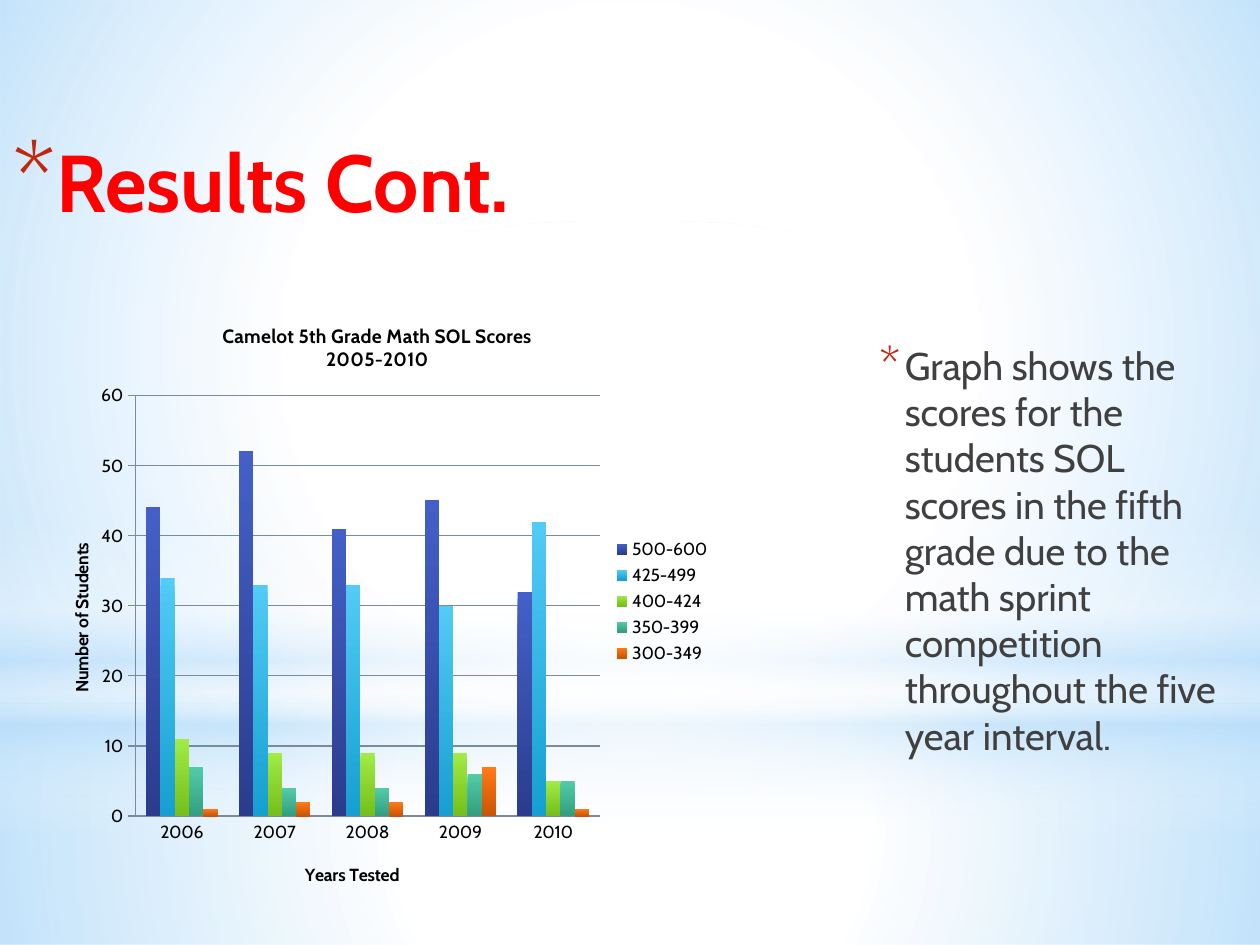
from dataclasses import dataclass
from typing import NamedTuple

from lxml import etree
from pptx import Presentation
from pptx import util as u
from pptx.chart import data as chart_data
from pptx.dml.color import RGBColor
from pptx.enum import chart as charts, shapes, text
from pptx.oxml import ns


@dataclass(frozen=True)
class Theme:
    font: str = "Cabin"
    white: str = "FFFFFF"
    sky: str = "B4DCFA"
    title: str = "FF0000"
    body: str = "404040"
    bullet: str = "C3260C"
    black: str = "000000"
    grid: str = "7A8B9C"
    title_size: float = 46
    body_size: float = 22
    chart_title_size: float = 11
    chart_size: float = 10


class Box(NamedTuple):
    left: float
    top: float
    width: float
    height: float

    def lengths(self) -> list:
        return [u.Pt(value) for value in self]


class Stop(NamedTuple):
    position: int
    color: str
    opacity: int


class Glow(NamedTuple):
    box: Box
    kind: shapes.MSO_SHAPE
    stops: list[Stop]
    radial: bool = True


class BulletText(NamedTuple):
    box: Box
    words: str
    size: float
    color: str
    bold: bool
    margin: float
    hanging: float
    bullet_percent: int
    space_after: float


class Series(NamedTuple):
    name: str
    values: tuple[int, ...]
    top_color: str
    bottom_color: str


THEME = Theme()
RECTANGLE, OVAL = shapes.MSO_SHAPE.RECTANGLE, shapes.MSO_SHAPE.OVAL
WHITE, SKY = THEME.white, THEME.sky

GLOWS = [
    Glow(Box(0, 402, 720, 138), RECTANGLE,
         [Stop(0, WHITE, 91), Stop(37, WHITE, 76), Stop(100, SKY, 79)]),
    Glow(Box(0, 0, 720, 402), RECTANGLE,
         [Stop(0, WHITE, 89), Stop(48, WHITE, 62), Stop(100, SKY, 79)]),
    Glow(Box(0, 296.6, 720, 180), RECTANGLE,
         [Stop(0, WHITE, 0), Stop(29, WHITE, 30), Stop(45, SKY, 40),
          Stop(55, WHITE, 26), Stop(65, SKY, 60), Stop(100, WHITE, 0)], radial=False),
    Glow(Box(0, 126, 720, 402), OVAL, [Stop(0, WHITE, 100), Stop(56, WHITE, 0)]),
]

TEXTS = [
    BulletText(Box(0, 72, 512.6, 90), "Results Cont.", THEME.title_size,
               THEME.title, True, 25.2, 25.2, 128, 0),
    BulletText(Box(492, 192, 216, 273.6),
               "Graph shows the scores for the students SOL scores in the fifth grade "
               "due to the math sprint competition throughout the five year interval.",
               THEME.body_size, THEME.body, False, 18, 14.4, 130, 3),
]

CHART_BOX = Box(18, 168, 396, 351)
YEARS = ["2006", "2007", "2008", "2009", "2010"]
SERIES = [
    Series("500-600", (44, 52, 41, 45, 32), "4460C8", "2B3C8E"),
    Series("425-499", (34, 33, 33, 30, 42), "52CBF5", "169FD1"),
    Series("400-424", (11, 9, 9, 9, 5), "A0EB45", "76BE1B"),
    Series("350-399", (7, 4, 4, 6, 5), "52CBA9", "339E80"),
    Series("300-349", (1, 2, 2, 7, 1), "FF7A18", "C95505"),
]


def child(parent, tag: str, **attributes):
    return etree.SubElement(parent, ns.qn(tag), {k: str(v) for k, v in attributes.items()})


def style_font(font, size: float, color: str, bold: bool = False) -> None:
    font.name, font.size, font.bold = THEME.font, u.Pt(size), bold
    font.color.rgb = RGBColor.from_string(color)


def draw_glow(slide, glow: Glow) -> None:
    shape = slide.shapes.add_shape(glow.kind, *glow.box.lengths())
    shape.line.fill.background()
    shape.shadow.inherit = False
    # Gradient with transparent stops
    gradient = etree.Element(ns.qn("a:gradFill"), rotWithShape="1")
    stops = child(gradient, "a:gsLst")
    for stop in glow.stops:
        color = child(child(stops, "a:gs", pos=stop.position * 1000), "a:srgbClr", val=stop.color)
        child(color, "a:alpha", val=stop.opacity * 1000)
    if glow.radial:
        center = dict.fromkeys("ltrb", 50000)
        child(child(gradient, "a:path", path="circle"), "a:fillToRect", **center)
    else:
        child(gradient, "a:lin", ang=90 * 60000, scaled=0)
    shape.element.spPr.find(ns.qn("a:ln")).addprevious(gradient)


def draw_text(slide, item: BulletText) -> None:
    frame = slide.shapes.add_textbox(*item.box.lengths()).text_frame
    frame.word_wrap = True
    frame.vertical_anchor = text.MSO_ANCHOR.TOP
    paragraph = frame.paragraphs[0]
    paragraph.space_after = u.Pt(item.space_after)
    run = paragraph.add_run()
    run.text = item.words
    style_font(run.font, item.size, item.color, item.bold)
    # Hanging asterisk
    properties = paragraph._p.get_or_add_pPr()
    properties.set("marL", str(u.Pt(item.margin)))
    properties.set("indent", str(-u.Pt(item.hanging)))
    child(child(properties, "a:buClr"), "a:srgbClr", val=THEME.bullet)
    child(properties, "a:buSzPct", val=item.bullet_percent * 1000)
    child(properties, "a:buFont", typeface=THEME.font)
    child(properties, "a:buChar", char="*")


def place(element, index: int, **fractions: float) -> None:
    """Set a manual chart layout as the child at the given index."""
    for old in element.findall(ns.qn("c:layout")):
        element.remove(old)
    layout = etree.Element(ns.qn("c:layout"))
    manual = child(layout, "c:manualLayout")
    if index == 0:
        child(manual, "c:layoutTarget", val="inner")
    for axis in "xy":
        child(manual, f"c:{axis}Mode", val="edge")
    for name, value in fractions.items():
        child(manual, f"c:{name}", val=value)
    element.insert(index, layout)


def write_title(title, lines: list[str], size: float, x: float, y: float) -> None:
    frame = title.text_frame
    for number, line in enumerate(lines):
        paragraph = frame.add_paragraph() if number else frame.paragraphs[0]
        run = paragraph.add_run()
        run.text = line
        style_font(run.font, size, THEME.black, True)
    place(title._element, 1, x=x, y=y)


def draw_chart(slide) -> None:
    data = chart_data.CategoryChartData(number_format="0")
    data.categories = YEARS
    for series in SERIES:
        data.add_series(series.name, series.values)
    chart = slide.shapes.add_chart(
        charts.XL_CHART_TYPE.COLUMN_CLUSTERED, *CHART_BOX.lengths(), data).chart
    style_font(chart.font, THEME.chart_size, THEME.black)

    # Columns
    plot = chart.plots[0]
    plot.gap_width, plot.overlap, plot.vary_by_categories = 150, 0, False
    for column, series in zip(plot.series, SERIES):
        fill = column.format.fill
        fill.gradient()
        fill.gradient_angle = 270
        for stop, color in zip(fill.gradient_stops, (series.top_color, series.bottom_color)):
            stop.color.rgb = RGBColor.from_string(color)

    # Axes
    years, students = chart.category_axis, chart.value_axis
    years.major_tick_mark = charts.XL_TICK_MARK.NONE
    students.major_tick_mark = charts.XL_TICK_MARK.OUTSIDE
    students.minimum_scale, students.maximum_scale, students.major_unit = 0, 60, 10
    students.has_major_gridlines = True
    for ruled in (years, students, students.major_gridlines):
        ruled.format.line.color.rgb = RGBColor.from_string(THEME.grid)
        ruled.format.line.width = u.Pt(0.75)

    # Titles, legend and plot position
    chart.has_title = chart.has_legend = True
    write_title(chart.chart_title, ["Camelot 5th Grade Math SOL Scores", "2005-2010"],
                THEME.chart_title_size, 0.27, 0.04)
    write_title(years.axis_title, ["Years Tested"], THEME.chart_size, 0.39, 0.92)
    write_title(students.axis_title, ["Number of Students"], THEME.chart_size, 0.05, 0.4)
    chart.legend.position = charts.XL_LEGEND_POSITION.RIGHT
    chart.legend.include_in_layout = False
    place(chart.legend._element, 1, x=0.84, y=0.39, w=0.14, h=0.22)
    place(chart._chartSpace.chart.plotArea, 0, x=0.15, y=0.165, w=0.67, h=0.685)


def main() -> None:
    presentation = Presentation()
    presentation.slide_width, presentation.slide_height = u.Pt(720), u.Pt(540)
    slide = presentation.slides.add_slide(presentation.slide_layouts[6])
    for glow in GLOWS:
        draw_glow(slide, glow)
    for item in TEXTS:
        draw_text(slide, item)
    draw_chart(slide)
    presentation.save("out.pptx")


if __name__ == "__main__":
    main()
